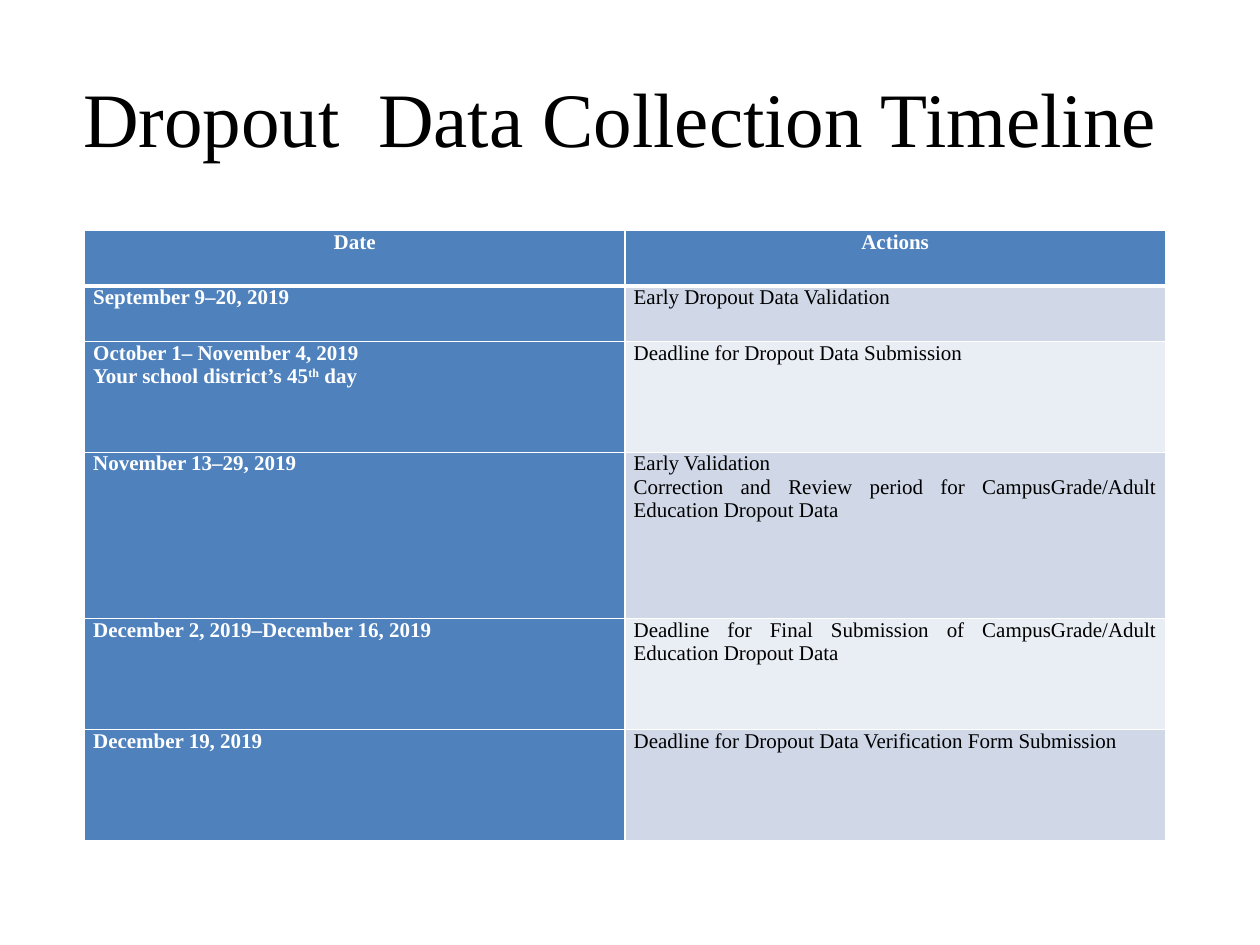
from lxml.etree import SubElement
from pptx import Presentation
from pptx.dml.color import RGBColor
from pptx.enum.text import MSO_ANCHOR, PP_ALIGN
from pptx.oxml.ns import qn
from pptx.util import Inches, Pt

COLORS = {"header": "4F81BD", "odd": "D0D8E8", "even": "E9EDF4", "light": "FFFFFF", "dark": "000000"}
FONT = "Times New Roman"
ROW_UNIT = Inches(0.44)
COLUMN_WIDTH = Inches(4.29)

timeline = [
    (1, [["Date"]], [["Actions"]]),
    (1, [["September 9–20, 2019"]], [["Early Dropout Data Validation"]]),
    (2, [["October 1– November 4, 2019"], ["Your school district’s 45", "th", " day"]],
     [["Deadline for Dropout Data Submission "]]),
    (3, [["November 13–29, 2019"]],
     [["Early Validation"], ["Correction and Review period for CampusGrade/Adult Education Dropout Data "]]),
    (2, [["December 2, 2019–December 16, 2019"]],
     [["Deadline for Final Submission of CampusGrade/Adult Education Dropout Data"]]),
    (2, [["December 19, 2019"]], [["Deadline for Dropout Data Verification Form Submission"]]),
]


def add_run(paragraph, text, size, color, bold=False):
    run = paragraph.add_run()
    run.text = text
    run.font.name = FONT
    run.font.size = Pt(size)
    run.font.bold = bold
    run.font.color.rgb = RGBColor.from_string(COLORS[color])
    return run


def add_border(cell, side, width):
    line = SubElement(cell._tc.get_or_add_tcPr(), qn(f"a:ln{side}"), w=str(Pt(width)))
    fill = SubElement(line, qn("a:solidFill"))
    SubElement(fill, qn("a:srgbClr"), val=COLORS["light"])


deck = Presentation()
deck.slide_width, deck.slide_height = Inches(10), Inches(7.5)
slide = deck.slides.add_slide(deck.slide_layouts[5])

title = slide.shapes.title
title.left, title.top = int(deck.slide_width * 0.05), int(deck.slide_height * 0.04)
title.width, title.height = int(deck.slide_width * 0.9), Inches(1.25)
title.text_frame.vertical_anchor = MSO_ANCHOR.MIDDLE
heading = title.text_frame.paragraphs[0]
heading.alignment = PP_ALIGN.CENTER
add_run(heading, "Dropout  Data Collection Timeline ", 44, "dark")

total_units = sum(units for units, *entries in timeline)
schedule = slide.shapes.add_table(
    len(timeline), 2, Inches(0.67), Inches(1.83), 2 * COLUMN_WIDTH, total_units * ROW_UNIT
).table
for column in schedule.columns:
    column.width = COLUMN_WIDTH

for row, (units, *entries) in enumerate(timeline):
    schedule.rows[row].height = units * ROW_UNIT
    for column, lines in enumerate(entries):
        cell = schedule.cell(row, column)
        cell.margin_left = cell.margin_right = Inches(0.07)
        cell.margin_top = cell.margin_bottom = 0
        emphasized = row == 0 or column == 0
        add_border(cell, "L", 1)
        add_border(cell, "R", 1)
        add_border(cell, "T", 3 if row == 1 else 1)
        add_border(cell, "B", 3 if row == 0 else 1)
        band = "header" if emphasized else "odd" if row % 2 else "even"
        cell.fill.solid()
        cell.fill.fore_color.rgb = RGBColor.from_string(COLORS[band])
        for index, pieces in enumerate(lines):
            frame = cell.text_frame
            paragraph = frame.add_paragraph() if index else frame.paragraphs[0]
            paragraph.alignment = PP_ALIGN.JUSTIFY if row else PP_ALIGN.CENTER
            for piece in pieces:
                run = add_run(paragraph, piece, 12, "light" if emphasized else "dark", emphasized)
                if piece == "th":
                    run._r.get_or_add_rPr().set("baseline", "30000")

deck.save("out.pptx")
